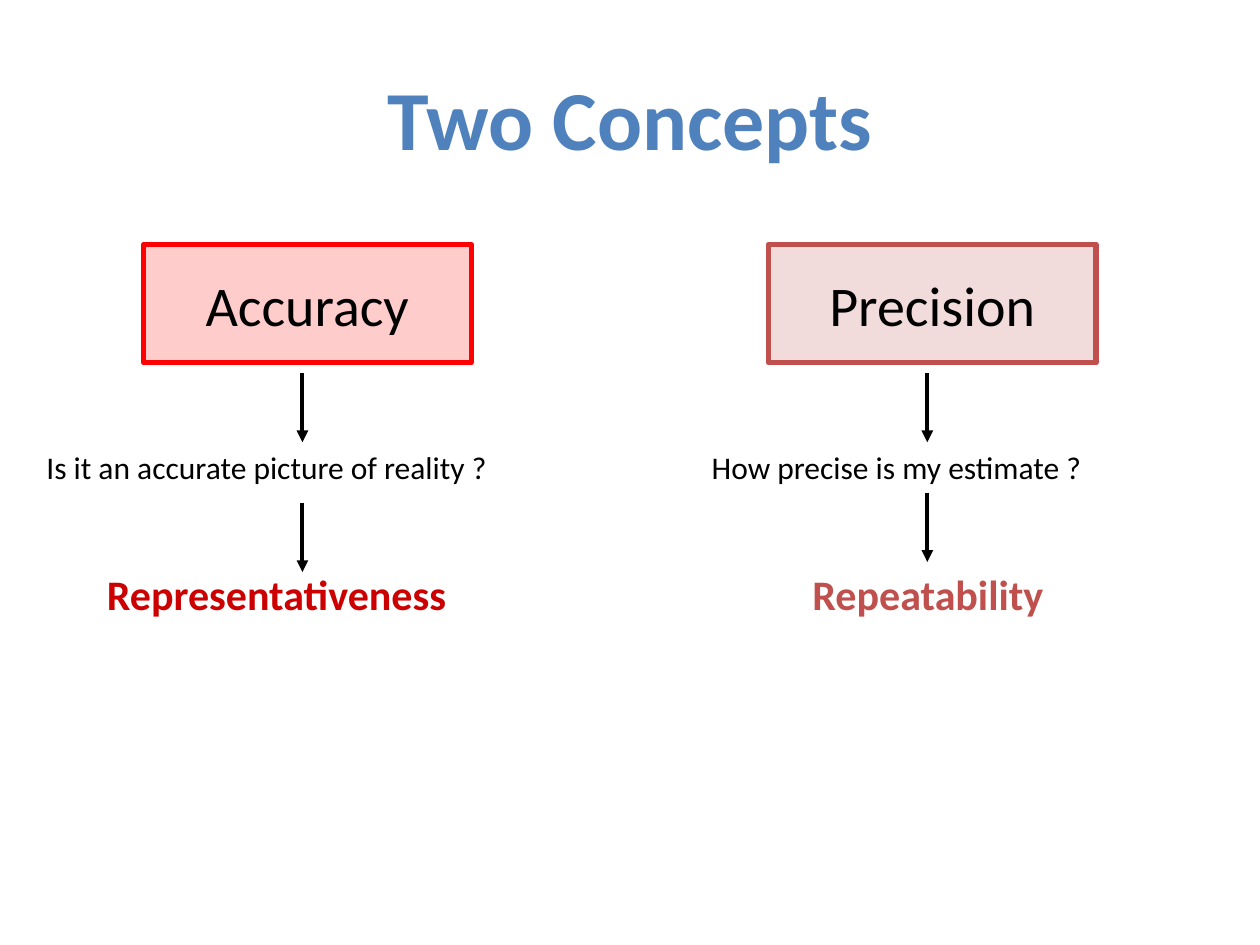
from dataclasses import dataclass

from lxml import etree
from pptx import Presentation
from pptx.dml.color import RGBColor
from pptx.enum.shapes import MSO_CONNECTOR, MSO_SHAPE
from pptx.enum.text import MSO_ANCHOR, PP_ALIGN
from pptx.oxml.ns import qn
from pptx.util import Inches, Pt

RECTANGLE = MSO_SHAPE.RECTANGLE
STRAIGHT = MSO_CONNECTOR.STRAIGHT
LEFT, CENTER = PP_ALIGN.LEFT, PP_ALIGN.CENTER
TOP, MIDDLE = MSO_ANCHOR.TOP, MSO_ANCHOR.MIDDLE


@dataclass(frozen=True)
class Theme:
    font: str = "Calibri"
    ink: str = "000000"
    title: str = "4F81BD"
    accuracy: str = "FF0000"
    accuracy_result: str = "CC0000"
    precision: str = "C0504D"
    title_size: int = 48
    concept_size: int = 32
    result_size: int = 24
    question_size: int = 18
    border: float = 3
    arrow: float = 2.25
    tint_percent: int = 20


class SlideBuilder:
    def __init__(self, slide, theme):
        self.shapes = slide.shapes
        self.theme = theme

    def set_text(self, frame, words, size, color, bold=False, align=LEFT, anchor=TOP):
        frame.text = words
        frame.vertical_anchor = anchor
        paragraph = frame.paragraphs[0]
        paragraph.alignment = align
        font = paragraph.runs[0].font
        font.name = self.theme.font
        font.size = Pt(size)
        font.bold = bold
        font.color.rgb = RGBColor.from_string(color)

    def text(self, left, top, width, height, words, size, color, **style):
        box = self.shapes.add_textbox(
            Inches(left), Inches(top), Inches(width), Inches(height))
        box.text_frame.word_wrap = True
        self.set_text(box.text_frame, words, size, color, **style)

    def concept(self, left, top, width, height, words, color):
        box = self.shapes.add_shape(
            RECTANGLE, Inches(left), Inches(top), Inches(width), Inches(height))
        box.shadow.inherit = False
        box.fill.solid()
        box.fill.fore_color.rgb = RGBColor.from_string(color)
        tint = box.element.spPr.find(qn("a:solidFill"))[0]
        etree.SubElement(tint, qn("a:alpha"), val=str(self.theme.tint_percent * 1000))
        box.line.color.rgb = RGBColor.from_string(color)
        box.line.width = Pt(self.theme.border)
        box.text_frame.word_wrap = False
        self.set_text(box.text_frame, words, self.theme.concept_size, self.theme.ink,
                      align=CENTER, anchor=MIDDLE)

    def down_arrow(self, x, top, length):
        arrow = self.shapes.add_connector(
            STRAIGHT, Inches(x), Inches(top), Inches(x), Inches(top + length))
        arrow.line.color.rgb = RGBColor.from_string(self.theme.ink)
        arrow.line.width = Pt(self.theme.arrow)
        properties = arrow.element.spPr
        etree.SubElement(properties.find(qn("a:ln")), qn("a:tailEnd"), type="triangle")
        etree.SubElement(properties, qn("a:effectLst"))


@dataclass(frozen=True)
class Concept:
    name: str
    color: str
    left: float
    question: str
    question_left: float
    question_width: float
    result: str
    result_color: str
    result_left: float
    result_align: PP_ALIGN
    second_arrow_top: float


def main():
    theme = Theme()
    presentation = Presentation()
    presentation.slide_width = Inches(10)
    presentation.slide_height = Inches(7.5)
    slide = presentation.slides.add_slide(presentation.slide_layouts[6])
    builder = SlideBuilder(slide, theme)

    concepts = [
        Concept("Accuracy", theme.accuracy, 1.14,
                "Is it an accurate picture of reality ?", 0.27, 4.57,
                "Representativeness", theme.accuracy_result, 0.75, LEFT, 3.99),
        Concept("Precision", theme.precision, 6.1,
                "How precise is my estimate ?", 5.55, 3.82,
                "Repeatability", theme.precision, 5.71, CENTER, 3.91),
    ]
    arrow_offset, arrow_length = 1.26, 0.55

    builder.text(0.5, 0.3, 9, 1.25, "Two Concepts", theme.title_size, theme.title,
                 bold=True, align=CENTER, anchor=MIDDLE)
    for concept in concepts:
        builder.concept(concept.left, 1.94, 2.6, 0.94, concept.name, concept.color)
        builder.text(concept.question_left, 3.51, concept.question_width, 0.4,
                     concept.question, theme.question_size, theme.ink)
        builder.text(concept.result_left, 4.46, 3.31, 0.5, concept.result,
                     theme.result_size, concept.result_color,
                     bold=True, align=concept.result_align)
        for arrow_top in (2.96, concept.second_arrow_top):
            builder.down_arrow(concept.left + arrow_offset, arrow_top, arrow_length)

    presentation.save("out.pptx")


if __name__ == "__main__":
    main()
